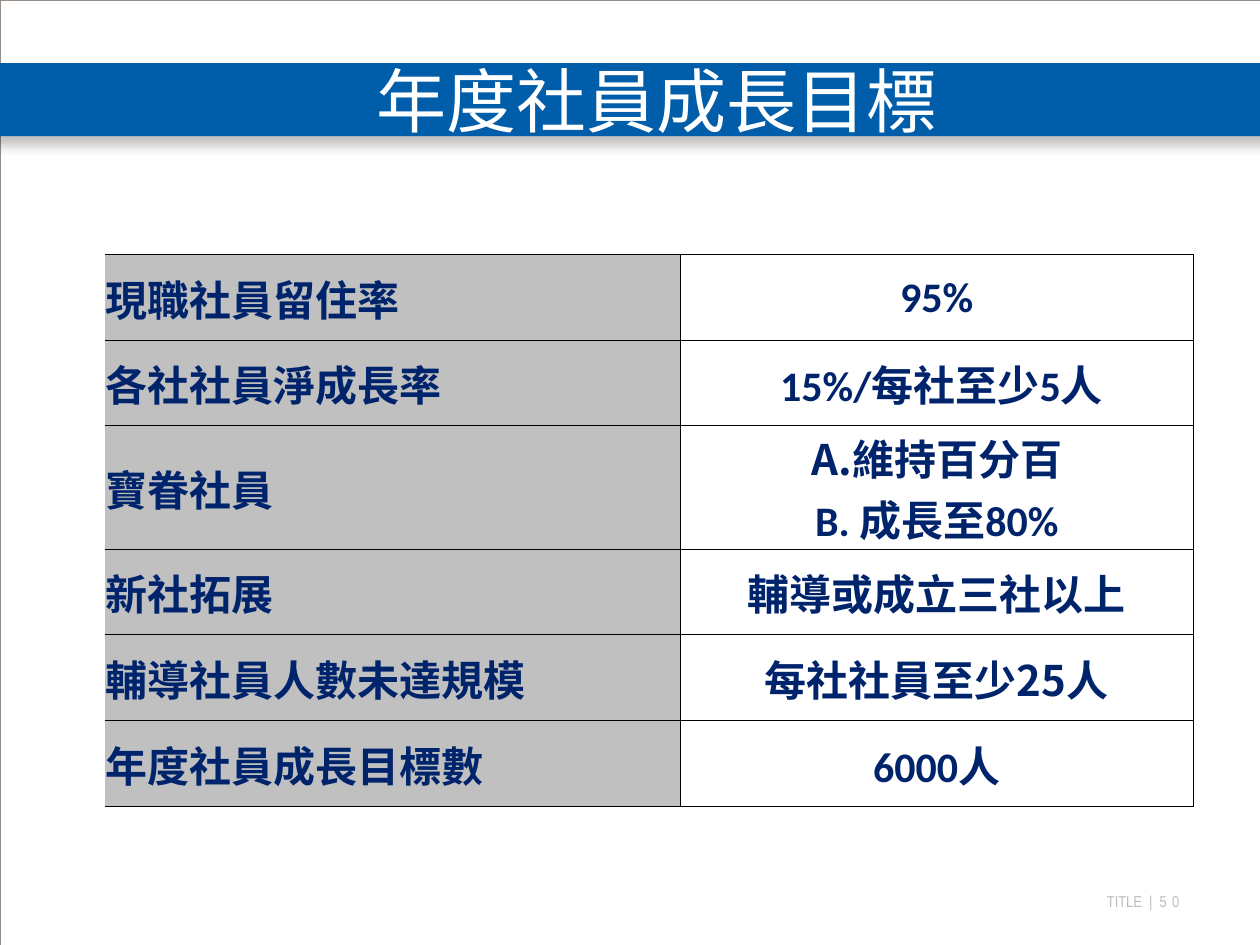
import dataclasses

import lxml.etree
import pptx
import pptx.dml.color
import pptx.enum.shapes
import pptx.enum.text
import pptx.oxml
import pptx.oxml.ns
import pptx.util

Inches = pptx.util.Inches
Pt = pptx.util.Pt
ALIGN = pptx.enum.text.PP_ALIGN
MIDDLE = pptx.enum.text.MSO_ANCHOR.MIDDLE


@dataclasses.dataclass(frozen=True)
class Theme:
    band: str = "005DAA"
    frame: str = "958D85"
    title: str = "FFFFFF"
    ink: str = "00246C"
    label_fill: str = "C0C0C0"
    rule: str = "000000"
    footer: str = "BCBDC0"
    chinese_font: str = "Noto Sans CJK SC"
    latin_font: str = "Calibri"
    footer_font: str = "Arial Narrow"
    title_size: int = 40
    cell_size: int = 24
    footer_size: int = 9


def rgb(value):
    return pptx.dml.color.RGBColor.from_string(value)


def add_element(parent, tag, **attributes):
    element = lxml.etree.SubElement(parent, pptx.oxml.ns.qn(tag))
    for name, value in attributes.items():
        element.set(name, str(value))
    return element


class SlideBuilder:
    def __init__(self, slide, theme):
        self.slide = slide
        self.theme = theme

    def add_run(self, para, text, font, size, color, bold=False, spacing=0):
        """Add a run; spacing is extra room between letters in points."""
        span = para.add_run()
        span.text = text
        span.font.name = font
        span.font.size = Pt(size)
        span.font.bold = bold
        span.font.color.rgb = rgb(color)
        properties = span.font._element
        if spacing:
            properties.set("spc", str(spacing * 100))
        add_element(properties, "a:ea", typeface=self.theme.chinese_font)

    def set_frame(self, frame):
        frame.margin_left = frame.margin_right = 0
        frame.margin_top = frame.margin_bottom = 0
        frame.word_wrap = True

    def add_rectangle(self, left, top, width, height):
        box = self.slide.shapes.add_shape(
            pptx.enum.shapes.MSO_SHAPE.RECTANGLE,
            Inches(left), Inches(top), Inches(width), Inches(height))
        box.shadow.inherit = False
        return box

    def add_frame(self):
        box = self.add_rectangle(0, 0, 10, 7.5)
        box.fill.background()
        box.line.color.rgb = rgb(self.theme.frame)
        box.line.width = Pt(0.13)

    def add_band(self):
        box = self.add_rectangle(-0.08, 0.5, 10.17, 0.58)
        box.fill.solid()
        box.fill.fore_color.rgb = rgb(self.theme.band)
        box.line.fill.background()
        effects = box._element.spPr.find(pptx.oxml.ns.qn("a:effectLst"))
        shadow = add_element(effects, "a:outerShdw", blurRad=Pt(7), dist=Pt(4.8),
                             dir=90 * 60000, algn="t", rotWithShape=0)
        color = add_element(shadow, "a:srgbClr", val=self.theme.rule)
        add_element(color, "a:alpha", val=25000)

    def add_title(self, text):
        title = self.slide.shapes.title
        title.left, title.top = Inches(0.42), Inches(0.5)
        title.width, title.height = Inches(9.58), Inches(0.58)
        # Bring the title in front of the band.
        self.slide.shapes._spTree.append(title._element)
        frame = title.text_frame
        self.set_frame(frame)
        frame.auto_size = pptx.enum.text.MSO_AUTO_SIZE.NONE
        frame.vertical_anchor = MIDDLE
        para = frame.paragraphs[0]
        para.alignment = ALIGN.CENTER
        self.add_run(para, text, self.theme.chinese_font,
                     self.theme.title_size, self.theme.title)

    def add_footer(self, label, number):
        box = self.slide.shapes.add_textbox(
            Inches(7.75), Inches(7.08), Inches(1.75), Inches(0.15))
        self.set_frame(box.text_frame)
        para = box.text_frame.paragraphs[0]
        para.alignment = ALIGN.RIGHT
        style = (self.theme.footer_font, self.theme.footer_size, self.theme.footer)
        self.add_run(para, label, *style)
        self.add_run(para, number, *style, spacing=3)

    def set_borders(self, cell, widths):
        """Draw borders from a mapping of side letter to points; 0 hides one."""
        properties = cell._tc.get_or_add_tcPr()
        for side, width in widths.items():
            line = add_element(properties, f"a:ln{side}", w=Pt(width))
            if width:
                fill = add_element(line, "a:solidFill")
                add_element(fill, "a:srgbClr", val=self.theme.rule)
            else:
                add_element(line, "a:noFill")

    def fill_cell(self, cell, lines, font, alignment):
        cell.margin_left = cell.margin_right = cell.margin_top = Inches(0.01)
        cell.margin_bottom = 0
        cell.vertical_anchor = MIDDLE
        frame = cell.text_frame
        for index, text in enumerate(lines):
            para = frame.add_paragraph() if index else frame.paragraphs[0]
            para.alignment = alignment
            self.add_run(para, text, font, self.theme.cell_size,
                         self.theme.ink, bold=True)

    def add_goal_table(self, goals, column_widths, row_heights):
        table = self.slide.shapes.add_table(
            len(goals), 2, Inches(0.83), Inches(2.02),
            Inches(sum(column_widths)), Inches(sum(row_heights))).table
        table.first_row = table.horz_banding = False
        for column, width in zip(table.columns, column_widths):
            column.width = Inches(width)
        for index, (label, targets, font) in enumerate(goals):
            table.rows[index].height = Inches(row_heights[index])
            label_cell, target_cell = table.cell(index, 0), table.cell(index, 1)
            top = 0.5 if index else 1
            self.set_borders(label_cell, {"L": 0, "R": 0.5, "T": top, "B": 0.5})
            self.set_borders(target_cell, {"L": 0.5, "R": 0.5, "T": top, "B": 0.5})
            label_cell.fill.solid()
            label_cell.fill.fore_color.rgb = rgb(self.theme.label_fill)
            target_cell.fill.background()
            self.fill_cell(label_cell, [label], self.theme.chinese_font, ALIGN.LEFT)
            self.fill_cell(target_cell, targets, font, ALIGN.CENTER)


def main():
    deck = pptx.Presentation()
    deck.slide_width, deck.slide_height = Inches(10), Inches(7.5)
    theme = Theme()
    page = SlideBuilder(deck.slides.add_slide(deck.slide_layouts[5]), theme)
    latin, chinese = theme.latin_font, theme.chinese_font
    goals = [
        ("現職社員留住率", ["95%"], latin),
        ("各社社員淨成長率", [" 15%/每社至少5人"], latin),
        ("寶眷社員", ["A.維持百分百", "B. 成長至80%"], latin),
        ("新社拓展", ["輔導或成立三社以上"], chinese),
        ("輔導社員人數未達規模", ["每社社員至少25人"], chinese),
        ("年度社員成長目標數", ["6000人"], latin),
    ]
    # The first of the two-line targets is set in the Chinese face below.
    page.add_footer("TITLE  |  ", "50  ")
    page.add_frame()
    page.add_band()
    page.add_title("年度社員成長目標")
    row_heights = [0.79 if len(targets) > 1 else 0.68 for _, targets, _ in goals]
    page.add_goal_table(goals, [4.57, 4.07], row_heights)
    table = page.slide.shapes[-1].table
    table.cell(2, 1).text_frame.paragraphs[0].runs[0].font.name = chinese
    deck.save("out.pptx")


if __name__ == "__main__":
    main()
